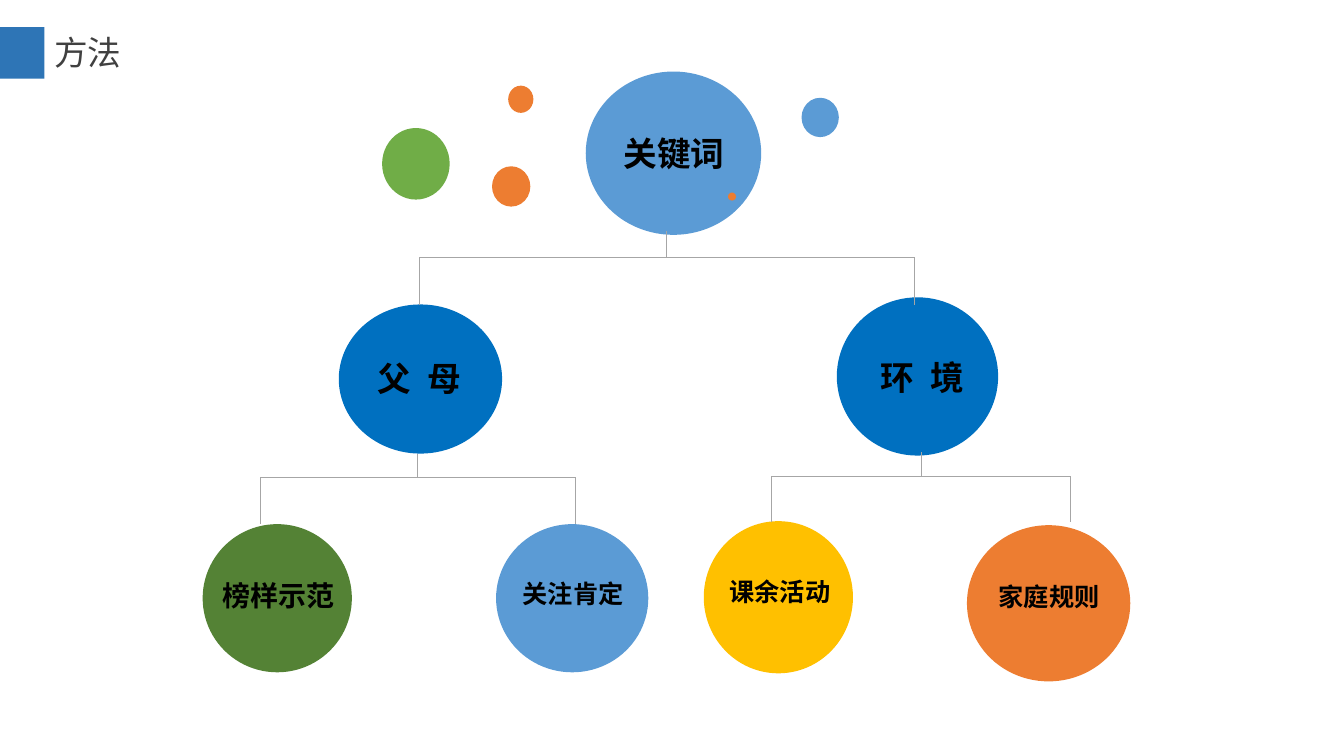
from lxml.etree import SubElement
from pptx import Presentation
from pptx.dml.color import RGBColor
from pptx.enum.shapes import MSO_CONNECTOR, MSO_SHAPE
from pptx.enum.text import MSO_AUTO_SIZE, PP_ALIGN
from pptx.oxml.ns import qn
from pptx.util import Inches, Pt

FONT_NAME = "Noto Sans CJK SC"

BLACK = RGBColor(0x00, 0x00, 0x00)
DARK_GRAY = RGBColor(0x40, 0x40, 0x40)
LINE_GRAY = RGBColor(0xA6, 0xA6, 0xA6)
TITLE_BLUE = RGBColor(0x2E, 0x75, 0xB6)
LIGHT_BLUE = RGBColor(0x5B, 0x9B, 0xD5)
DEEP_BLUE = RGBColor(0x00, 0x70, 0xC0)
LIGHT_GREEN = RGBColor(0x70, 0xAD, 0x47)
DARK_GREEN = RGBColor(0x54, 0x82, 0x35)
YELLOW = RGBColor(0xFF, 0xC0, 0x00)
ORANGE = RGBColor(0xED, 0x7D, 0x31)

# Circle box, colour, label, label box, text size, letter spacing in points
TOPICS = [
    ((5.81, 0.71, 1.74, 1.62), LIGHT_BLUE, "关键词", (6.08, 1.27, 1.21, 0.5), 24, 0),
    ((3.36, 3.02, 1.62, 1.48), DEEP_BLUE, "父 母", (3.6, 3.5, 1.12, 0.5), 24, 3),
    ((8.3, 2.95, 1.6, 1.57), DEEP_BLUE, "环 境", (8.59, 3.49, 1.12, 0.5), 24, 3),
    ((2.01, 5.2, 1.48, 1.47), DARK_GREEN, "榜样示范", (2.1, 5.69, 1.32, 0.44), 20, 0),
    ((4.92, 5.2, 1.51, 1.47), LIGHT_BLUE, "关注肯定", (5.08, 5.69, 1.21, 0.4), 18, 0),
    ((6.98, 5.17, 1.48, 1.51), YELLOW, "课余活动", (7.13, 5.67, 1.21, 0.4), 18, 0),
    ((9.59, 5.21, 1.62, 1.55), ORANGE, "家庭规则", (9.8, 5.72, 1.21, 0.4), 18, 0),
]

# Left, right and stem x; then stem top, bar and branch bottom y
BRACKETS = [
    (4.16, 9.07, 6.61, 2.29, 2.55, 3.03),
    (2.58, 5.71, 4.14, 4.5, 4.74, 5.2),
    (7.65, 10.62, 9.14, 4.48, 4.73, 5.18),
]

DOTS = [
    ((4.88, 1.65, 0.38, 0.4), ORANGE),
    ((5.04, 0.85, 0.25, 0.27), ORANGE),
    ((7.22, 1.91, 0.08, 0.08), ORANGE),
    ((7.95, 0.97, 0.37, 0.39), LIGHT_BLUE),
    ((3.79, 1.27, 0.67, 0.71), LIGHT_GREEN),
]


def add_filled_shape(slide, kind, box, color):
    shape = slide.shapes.add_shape(kind, *map(Inches, box))
    shape.shadow.inherit = False
    shape.fill.solid()
    shape.fill.fore_color.rgb = color
    shape.line.fill.background()


def add_label(slide, text, box, size, color=BLACK, bold=True,
              alignment=PP_ALIGN.CENTER, spacing=0):
    frame = slide.shapes.add_textbox(*map(Inches, box)).text_frame
    frame.word_wrap = False
    frame.auto_size = MSO_AUTO_SIZE.SHAPE_TO_FIT_TEXT
    paragraph = frame.paragraphs[0]
    paragraph.alignment = alignment
    run = paragraph.add_run()
    run.text = text
    run.font.color.rgb = color
    text_format = {"name": FONT_NAME, "size": Pt(size), "bold": bold}
    for attribute, value in text_format.items():
        setattr(run.font, attribute, value)
    # East Asian font and letter spacing
    properties = run._r.get_or_add_rPr()
    SubElement(properties, qn("a:ea"), typeface=FONT_NAME)
    if spacing:
        properties.set("spc", str(spacing * 100))


def add_line(slide, *ends):
    connector = slide.shapes.add_connector(MSO_CONNECTOR.STRAIGHT, *map(Inches, ends))
    connector.line.color.rgb = LINE_GRAY
    connector.line.width = Pt(0.5)
    SubElement(connector._element.spPr, qn("a:effectLst"))


def add_bracket(slide, left, right, stem, top, bar, bottom):
    add_line(slide, left, bar, right, bar)
    add_line(slide, stem, bar, stem, top)
    for branch in (left, right):
        add_line(slide, branch, bar, branch, bottom)


def main():
    presentation = Presentation()
    presentation.slide_width = Inches(13.33)
    presentation.slide_height = Inches(7.5)
    slide = presentation.slides.add_slide(presentation.slide_layouts[6])

    # Title
    add_filled_shape(slide, MSO_SHAPE.RECTANGLE, (0, 0.27, 0.44, 0.51), TITLE_BLUE)
    add_label(slide, "方法", (0.44, 0.27, 0.88, 0.5), 24, DARK_GRAY, False, PP_ALIGN.LEFT)

    # Topic circles with their labels
    for circle, color, text, label, size, spacing in TOPICS:
        add_filled_shape(slide, MSO_SHAPE.OVAL, circle, color)
        add_label(slide, text, label, size, spacing=spacing)

    # Tree lines
    for bracket in BRACKETS:
        add_bracket(slide, *bracket)

    # Decorative dots
    for box, color in DOTS:
        add_filled_shape(slide, MSO_SHAPE.OVAL, box, color)

    presentation.save("out.pptx")


if __name__ == "__main__":
    main()
